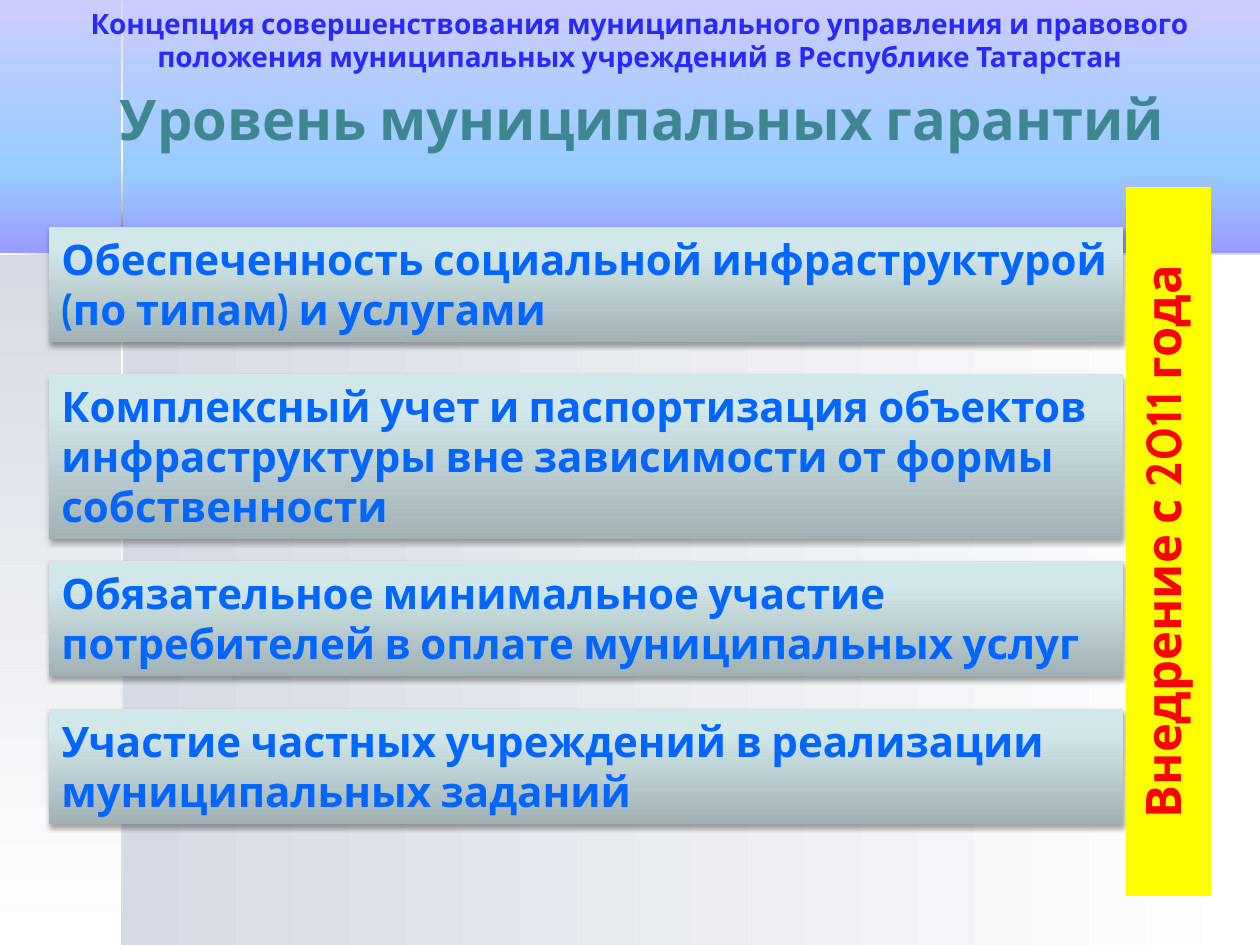
"""Build the slide on the level of municipal guarantees."""
from dataclasses import dataclass

from lxml import etree
from pptx import Presentation
from pptx import util as u
from pptx.dml.color import RGBColor
from pptx.enum import shapes, text
from pptx.oxml.ns import qn


@dataclass(frozen=True)
class Theme:
    font: str = "Cabin"
    head: tuple = (16, "2929FF")
    title: tuple = (32, "408691")
    box: tuple = (24, "0066FF")
    side: tuple = (28, "FF0000")
    side_fill: str = "FFFF00"
    sky: tuple = ((0, "CCCCFF"), (18, "99CCFF"), (36, "9966FF"),
                  (61, "CC99FF"), (82, "99CCFF"), (100, "CCCCFF"))
    glass: tuple = ((0, "A2B2B4"), (80, "D2E7EA"), (100, "D3E8EC"))
    fade_in: tuple = ((0, "D6DAE4"), (100, "FFFFFF"))
    fade_out: tuple = ((0, "FFFFFF"), (100, "D6DAE4"))
    grey_in: tuple = ((0, "C0C0C0"), (100, "FFFFFF"))
    grey_out: tuple = ((0, "FFFFFF"), (100, "C0C0C0"))
    glint: tuple = ((0, "C0C0C0"), (50, "3333CC"), (100, "C0C0C0"))


T = Theme()
PX = 914400 / 126
RIGHT, DOWN, UP = 0, 90, 270

PANELS = [
    ((122, 255, 1138, 690), T.fade_in, RIGHT),
    ((0, 255, 122, 690), T.fade_in, DOWN),
    ((121, 1, 2, 151), T.fade_in, DOWN),
    ((121, 355, 2, 590), T.fade_out, DOWN),
    ((223, 253, 1037, 2), T.fade_out, RIGHT),
    ((121, 300, 2, 55), T.grey_in, DOWN),
    ((121, 152, 2, 56), T.grey_out, DOWN),
    ((121, 208, 2, 92), T.glint, DOWN),
    ((0, 253, 76, 2), T.grey_out, RIGHT),
    ((168, 253, 55, 2), T.grey_in, RIGHT),
    ((76, 253, 92, 2), T.glint, RIGHT),
]

BOXES = [
    (227, 115, "Обеспеченность социальной инфраструктурой (по типам) и услугами"),
    (374, 165, "Комплексный учет и паспортизация объектов инфраструктуры вне "
               "зависимости от формы собственности"),
    (561, 115, "Обязательное минимальное участие потребителей в оплате муниципальных услуг"),
    (709, 115, "Участие частных учреждений в реализации муниципальных заданий"),
]


def px(n):
    """Turn pixels into EMU."""
    return u.Emu(round(n * PX))


def paint(fill, host, stops, angle):
    """Give a fill a linear gradient with a clockwise angle."""
    fill.gradient()
    grad = next(host.iter(qn("a:gradFill")))
    lst = grad.find(qn("a:gsLst"))
    for gs in list(lst):
        lst.remove(gs)
    for pos, color in stops:
        gs = etree.SubElement(lst, qn("a:gs"), pos=str(pos * 1000))
        etree.SubElement(gs, qn("a:srgbClr"), val=color)
    grad.find(qn("a:lin")).set("ang", str(angle * 60000))


def add_rect(s, box):
    """Add a rectangle without line or shadow."""
    sp = s.shapes.add_shape(shapes.MSO_SHAPE.RECTANGLE, *map(px, box))
    sp.shadow.inherit = False
    sp.line.fill.background()
    return sp


def add_panel(s, box, stops, angle):
    """Add a rectangle with a gradient."""
    sp = add_rect(s, box)
    paint(sp.fill, sp.element, stops, angle)
    return sp


def cast_shadow(sp):
    """Add a soft shadow below a shape."""
    effects = sp.element.spPr.find(qn("a:effectLst"))
    shadow = etree.SubElement(effects, qn("a:outerShdw"), blurRad="40000",
                              dist="23000", dir="5400000", rotWithShape="0")
    color = etree.SubElement(shadow, qn("a:srgbClr"), val="000000")
    etree.SubElement(color, qn("a:alpha"), val="35000")


def write(sp, words, style, align=text.PP_ALIGN.CENTER):
    """Set the bold text of a shape."""
    tf = sp.text_frame
    tf.word_wrap = True
    tf.auto_size = text.MSO_AUTO_SIZE.SHAPE_TO_FIT_TEXT
    tf.vertical_anchor = text.MSO_ANCHOR.TOP
    p = tf.paragraphs[0]
    p.text = words
    p.alignment = align
    size, color = style
    p.font.name, p.font.size, p.font.bold = T.font, u.Pt(size), True
    p.font.color.rgb = RGBColor.from_string(color)


def add_title(s, box, words):
    """Place the title above the panels."""
    sp = s.shapes.title
    sp.element.getparent().append(sp.element)
    sp.left, sp.top, sp.width, sp.height = map(px, box)
    write(sp, words, T.title)


def add_box(s, top, height, words):
    """Add a glassy box with a statement."""
    sp = add_panel(s, (49, top, 1074, height), T.glass, UP)
    cast_shadow(sp)
    write(sp, words, T.box, text.PP_ALIGN.LEFT)


def add_side(s, box, words):
    """Add the side bar with text that reads upwards."""
    sp = add_rect(s, box)
    sp.fill.solid()
    sp.fill.fore_color.rgb = RGBColor.from_string(T.side_fill)
    write(sp, words, T.side)
    sp.element.txBody.find(qn("a:bodyPr")).set("vert", "vert270")


def main():
    """Build and save the slide."""
    prs = Presentation()
    prs.slide_width, prs.slide_height = px(1260), px(945)
    s = prs.slides.add_slide(prs.slide_layouts[5])
    paint(s.background.fill, s.element, T.sky, DOWN)
    for panel in PANELS:
        add_panel(s, *panel)
    add_title(s, (25, 78, 1235, 81), "Уровень муниципальных гарантий")
    for box in BOXES:
        add_box(s, *box)
    add_side(s, (1126, 187, 85, 709), "Внедрение с 2011 года")
    head = s.shapes.add_textbox(*map(px, (49, 0, 1182, 81)))
    write(head, "Концепция совершенствования муниципального управления и правового "
                "положения муниципальных учреждений в Республике Татарстан", T.head)
    prs.save("out.pptx")


if __name__ == "__main__":
    main()
